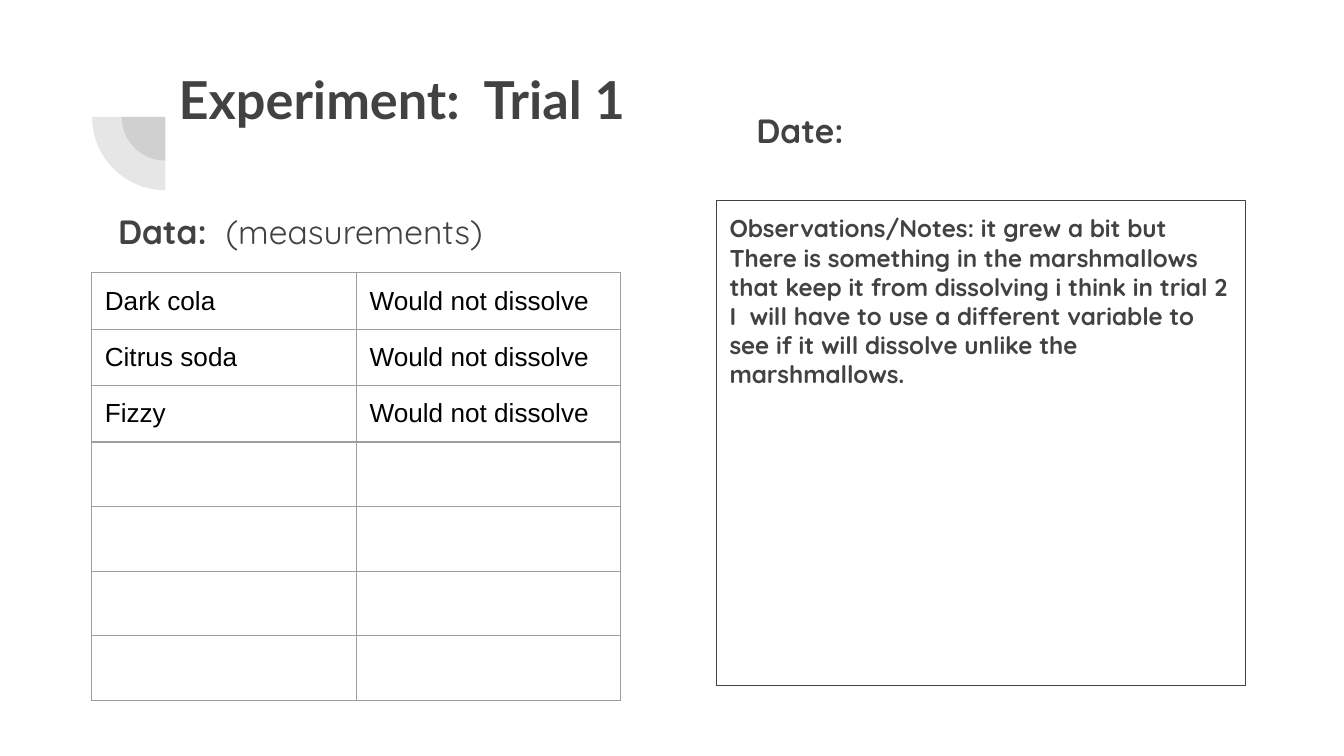
from pptx import Presentation
from pptx.dml.color import RGBColor
from pptx.enum.shapes import MSO_SHAPE as Shape
from pptx.enum.text import MSO_ANCHOR as Anchor, PP_ALIGN as Align
from pptx.oxml.ns import qn
from pptx.util import Inches, Pt
from lxml.etree import SubElement

DARK = RGBColor(0x42, 0x42, 0x42)
BLACK = RGBColor(0, 0, 0)
GRID = RGBColor(0x9E, 0x9E, 0x9E)


def style(para, name, size, color, bold=None):
    font = para.font
    font.name, font.size, font.bold = name, Pt(size), bold
    font.color.rgb = color
    para.alignment = Align.LEFT


def setup(frame):
    frame.word_wrap = True
    frame.vertical_anchor = Anchor.TOP
    frame.margin_left = frame.margin_right = Inches(0.1)
    frame.margin_top = frame.margin_bottom = Inches(0.1)


# Widescreen page, 16 to 9
deck = Presentation()
deck.slide_width = Inches(10)
deck.slide_height = Inches(10) * 9 // 16
slide = deck.slides.add_slide(deck.slide_layouts[5])
shapes = slide.shapes

# Quarter circles around one shared centre, behind the title
for size in (0.65, 1.09):
    pie = shapes.add_shape(Shape.PIE, Inches(1.23 - size / 2),
                           Inches(0.87 - size / 2), Inches(size), Inches(size))
    pie.adjustments[0], pie.adjustments[1] = 54, 108
    pie.shadow.inherit = False
    pie.line.fill.background()
    pie.fill.solid()
    pie.fill.fore_color.rgb = DARK
    tint = pie.fill._xPr.find(qn("a:solidFill"))[0]
    SubElement(tint, qn("a:alpha"), val="13000")

# Title
title = shapes.title
title.left, title.top = Inches(1.23), Inches(0.4)
title.width, title.height = Inches(7.69), Inches(1.09)
setup(title.text_frame)
title.text_frame.text = "Experiment:  Trial 1"
style(title.text_frame.paragraphs[0], "Lato", 28, DARK, True)

# Observations box
notes = shapes.add_shape(Shape.RECTANGLE, Inches(5.33), Inches(1.49),
                         Inches(3.94), Inches(3.61))
notes.shadow.inherit = False
notes.fill.background()
notes.line.color.rgb = DARK
notes.line.width = Pt(0.75)
setup(notes.text_frame)
notes.text_frame.text = (
    "Observations/Notes: it grew a bit but\n"
    "There is something in the marshmallows that keep it from dissolving "
    "i think in trial 2 I  will have to use a different variable to see if "
    "it will dissolve unlike the marshmallows.")
for para in notes.text_frame.paragraphs:
    style(para, "Quicksand", 13, DARK, True)

# Data and date labels
labels = [(0.78, 1.47, "Data:  ", "(measurements)"), (5.53, 0.72, "Date:", "")]
for left, top, head, rest in labels:
    box = shapes.add_textbox(Inches(left), Inches(top), Inches(4.22), Inches(0.45))
    setup(box.text_frame)
    para = box.text_frame.paragraphs[0]
    style(para, "Quicksand", 18, DARK)
    para.add_run().text = head
    para.runs[0].font.bold = True
    if rest:
        para.add_run().text = rest
        para.runs[1].font.bold = False

# Results table: three filled rows, four taller empty ones
drinks = ["Dark cola", "Citrus soda", "Fizzy"]
rows = [(drink, "Would not dissolve") for drink in drinks] + [("", "")] * 4
table = shapes.add_table(len(rows), 2, Inches(0.68), Inches(2.03),
                         Inches(3.94), Inches(3.18)).table
table.first_row = table.horz_banding = False
for r, row in enumerate(rows):
    table.rows[r].height = Inches(0.42 if row[0] else 0.48)
    for c, text in enumerate(row):
        cell = table.cell(r, c)
        cell.margin_left = cell.margin_right = cell.margin_top = Inches(0.1)
        cell.margin_bottom = Inches(0.08)
        if text:
            cell.text = text
            style(cell.text_frame.paragraphs[0], "Arial", 14, BLACK)
        props = cell._tc.get_or_add_tcPr()
        for side in ("lnL", "lnR", "lnT", "lnB"):
            edge = SubElement(props, qn("a:" + side), w=str(Pt(0.75)))
            fill = SubElement(edge, qn("a:solidFill"))
            SubElement(fill, qn("a:srgbClr"), val=str(GRID))
        cell.fill.background()

deck.save("out.pptx")
